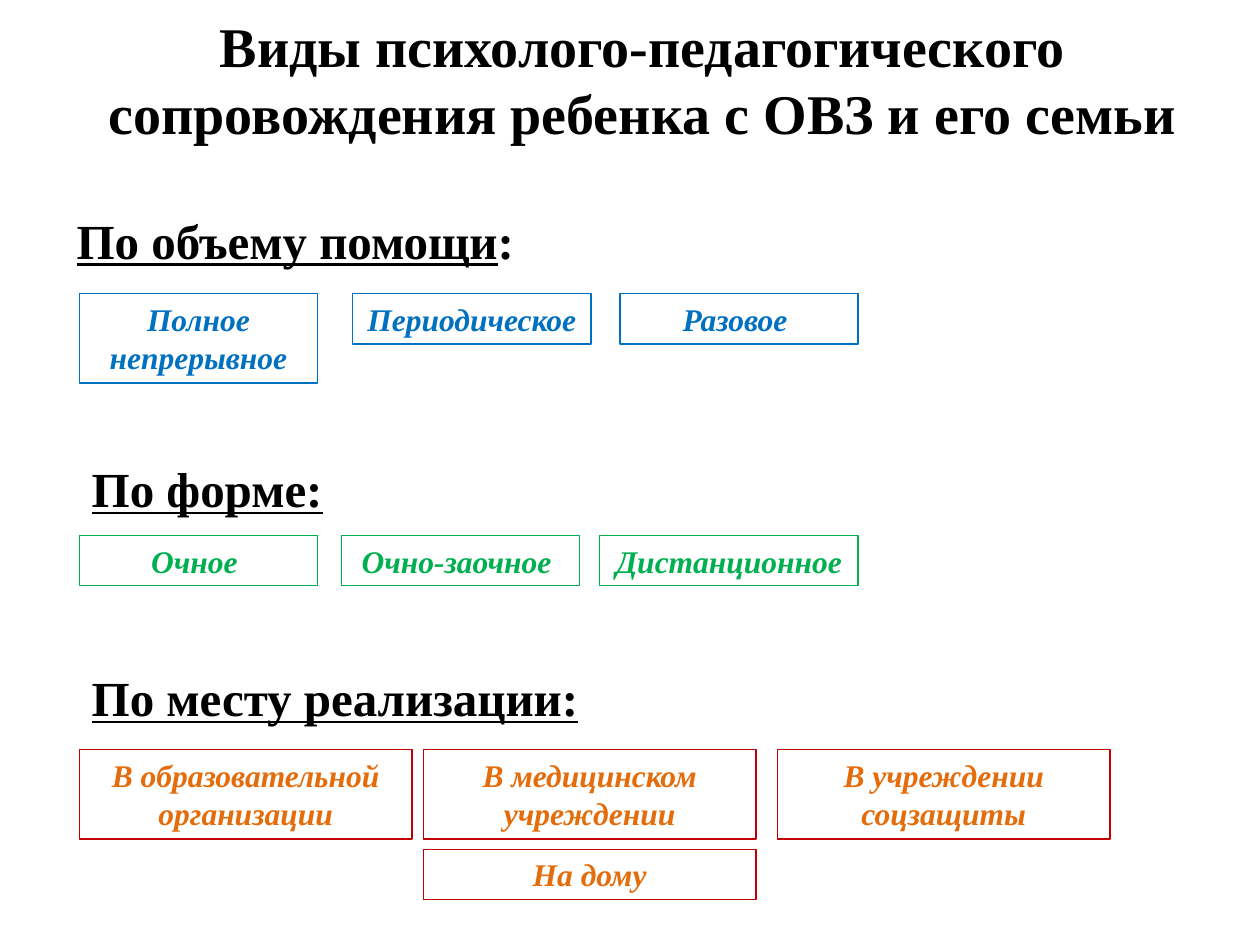
from pptx import Presentation
from pptx.dml.color import RGBColor
from pptx.enum.shapes import MSO_SHAPE
from pptx.enum.text import MSO_ANCHOR, MSO_AUTO_SIZE, PP_ALIGN
from pptx.util import Inches, Pt

COLORS = {
    "black": "000000",
    "blue": "0070C0",
    "green": "00B050",
    "red": "C00000",
    "orange": "E46C0A",
}

prs = Presentation()
prs.slide_width, prs.slide_height = Inches(10), Inches(7.5)
slide = prs.slides.add_slide(prs.slide_layouts[6])


def style(paragraph, size, color):
    paragraph.font.name = "Times New Roman"
    paragraph.font.size = Pt(size)
    paragraph.font.bold = True
    paragraph.font.color.rgb = RGBColor.from_string(COLORS[color])


title = slide.shapes.add_textbox(Inches(0.2), 0, Inches(9.8), Inches(1.25)).text_frame
title.word_wrap = True
title.vertical_anchor = MSO_ANCHOR.MIDDLE
title.text = "Виды психолого-педагогического сопровождения ребенка с ОВЗ и его семьи"
title.paragraphs[0].alignment = PP_ALIGN.CENTER
style(title.paragraphs[0], 32, "black")

headings = [
    (0.51, 1.62, [("По объему помощи", True), (":", False)]),
    (0.63, 3.59, [("По форме:", True)]),
    (0.63, 5.25, [("По месту реализации:", True)]),
]
for left, top, parts in headings:
    heading = slide.shapes.add_textbox(
        Inches(left), Inches(top), Inches(9), Inches(0.66)
    ).text_frame
    heading.word_wrap = True
    paragraph = heading.paragraphs[0]
    paragraph.space_before = Pt(5.6)
    style(paragraph, 28, "black")
    for text, underlined in parts:
        run = paragraph.add_run()
        run.text = text
        run.font.underline = underlined

ONE_LINE, TWO_LINES = 0.4, 0.71
kinds = [
    ("blue", "blue", 2.33, [
        (0.63, 1.89, TWO_LINES, "Полное непрерывное"),
        (2.8, 1.89, ONE_LINE, "Периодическое "),
        (4.92, 1.89, ONE_LINE, "Разовое "),
    ]),
    ("green", "green", 4.25, [
        (0.63, 1.89, ONE_LINE, "Очное "),
        (2.71, 1.89, ONE_LINE, "Очно-заочное "),
        (4.76, 2.05, ONE_LINE, "Дистанционное"),
    ]),
    ("red", "orange", 5.95, [
        (0.63, 2.64, TWO_LINES, "В образовательной организации"),
        (3.36, 2.64, TWO_LINES, "В медицинском учреждении"),
        (6.17, 2.64, TWO_LINES, "В учреждении соцзащиты"),
    ]),
    ("red", "orange", 6.74, [(3.36, 2.64, ONE_LINE, "На дому")]),
]
for border, ink, top, options in kinds:
    for left, width, height, text in options:
        option = slide.shapes.add_shape(
            MSO_SHAPE.RECTANGLE, Inches(left), Inches(top), Inches(width), Inches(height)
        )
        option.shadow.inherit = False
        option.fill.background()
        option.line.color.rgb = RGBColor.from_string(COLORS[border])
        option.line.width = Pt(0.75)
        frame = option.text_frame
        frame.word_wrap = True
        frame.auto_size = MSO_AUTO_SIZE.SHAPE_TO_FIT_TEXT
        frame.vertical_anchor = MSO_ANCHOR.TOP
        frame.text = text
        paragraph = frame.paragraphs[0]
        paragraph.alignment = PP_ALIGN.CENTER
        style(paragraph, 18, ink)
        paragraph.font.italic = True

prs.save("out.pptx")
